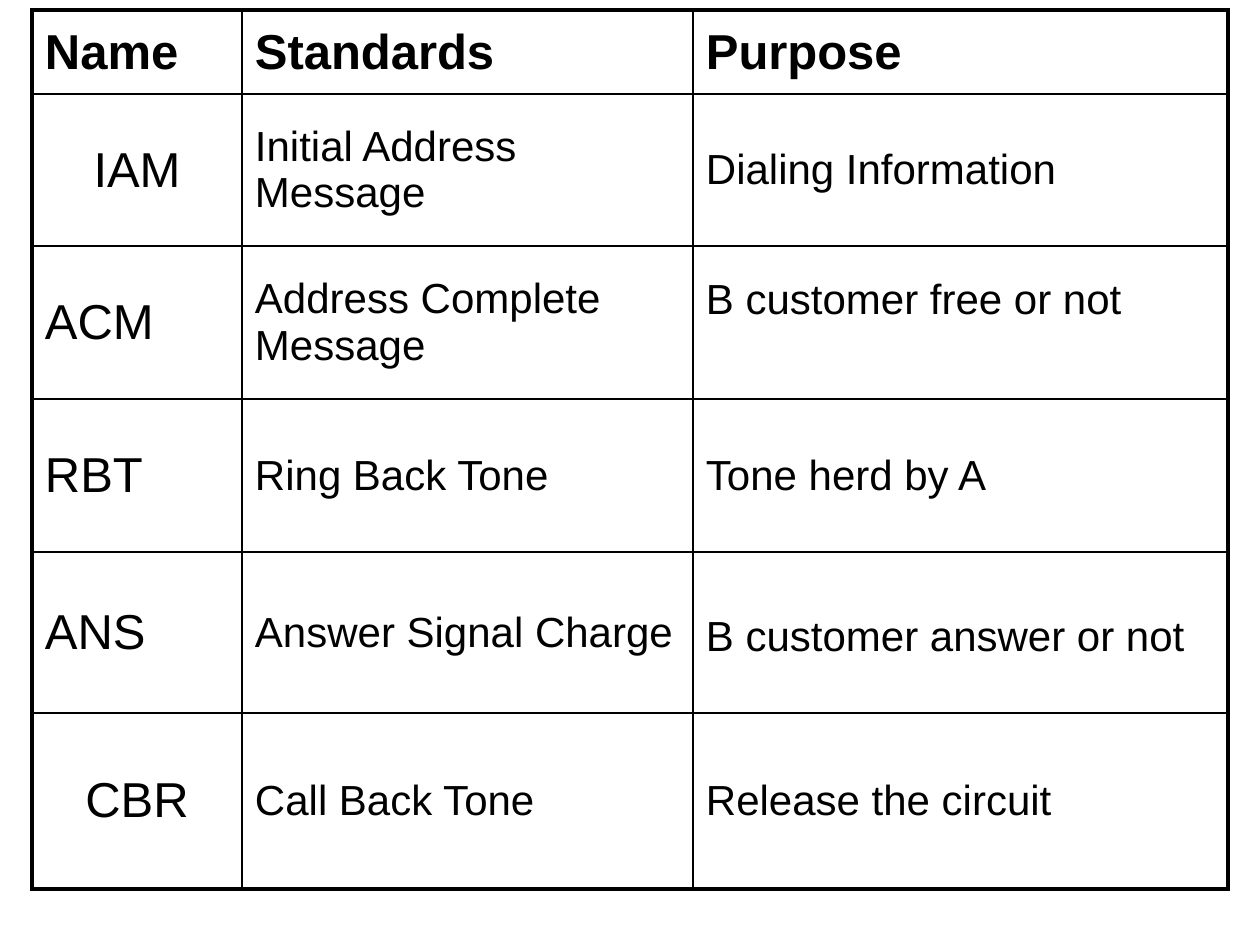
from pptx import Presentation
from pptx.dml.color import RGBColor
from pptx.enum.text import MSO_ANCHOR, PP_ALIGN
from pptx.oxml import parse_xml
from pptx.oxml.ns import nsdecls
from pptx.util import Pt

PX = 914400 / 126
LINE = "000000"
MARGIN = 13


def color(value):
    return RGBColor.from_string(value)


def write(cell, text, size=24, bold=False, align=PP_ALIGN.LEFT, fill="000000"):
    p = cell.text_frame.paragraphs[0]
    p.alignment = align
    r = p.add_run()
    r.text = text
    r.font.name = "Arial"
    r.font.size = Pt(size)
    r.font.bold = bold
    r.font.color.rgb = color(fill)


prs = Presentation()
prs.slide_width = int(1260 * PX)
prs.slide_height = int(945 * PX)
s = prs.slides.add_slide(prs.slide_layouts[6])

rows = [
    ("Name", "Standards", "Purpose"),
    ("IAM", "Initial Address Message", "Dialing Information"),
    ("ACM", "Address Complete Message", "B customer free or not"),
    ("RBT", "Ring Back Tone", "Tone herd by A"),
    ("ANS", "Answer Signal Charge", "B customer answer or not"),
    ("CBR", "Call Back Tone", "Release the circuit"),
]
widths = [210, 451, 535]
heights = [84, 152, 153, 153, 161, 176]
centered = {"IAM", "CBR"}
extra_top = {"B customer answer or not": 8}
extra_bottom = {"B customer free or not": 46}
last_row, last_col = len(rows) - 1, len(widths) - 1

frame = s.shapes.add_table(len(rows), len(widths), int(32 * PX), int(10 * PX),
                           int(sum(widths) * PX), int(sum(heights) * PX))
table = frame.table
table.first_row = False
table.horz_banding = False
for column, width in zip(table.columns, widths):
    column.width = int(width * PX)
for row, height in zip(table.rows, heights):
    row.height = int(height * PX)

for i, row in enumerate(rows):
    for j, text in enumerate(row):
        cell = table.cell(i, j)
        outer = {"L": j == 0, "R": j == last_col, "T": i == 0, "B": i == last_row}
        tcPr = cell._tc.get_or_add_tcPr()
        for side, is_outer in outer.items():
            width = Pt(2.25 if is_outer else 1)
            tcPr.append(parse_xml(
                f'<a:ln{side} {nsdecls("a")} w="{width}"><a:solidFill>'
                f'<a:srgbClr val="{LINE}"/></a:solidFill></a:ln{side}>'))
        cell.fill.background()
        cell.vertical_anchor = MSO_ANCHOR.MIDDLE
        cell.margin_left = cell.margin_right = int(MARGIN * PX)
        cell.margin_top = int((6 + extra_top.get(text, 0)) * PX)
        cell.margin_bottom = int((6 + extra_bottom.get(text, 0)) * PX)
        write(cell, text, size=28 if i == 0 or j == 0 else 24, bold=i == 0,
              align=PP_ALIGN.CENTER if text in centered else PP_ALIGN.LEFT)

prs.save("out.pptx")
